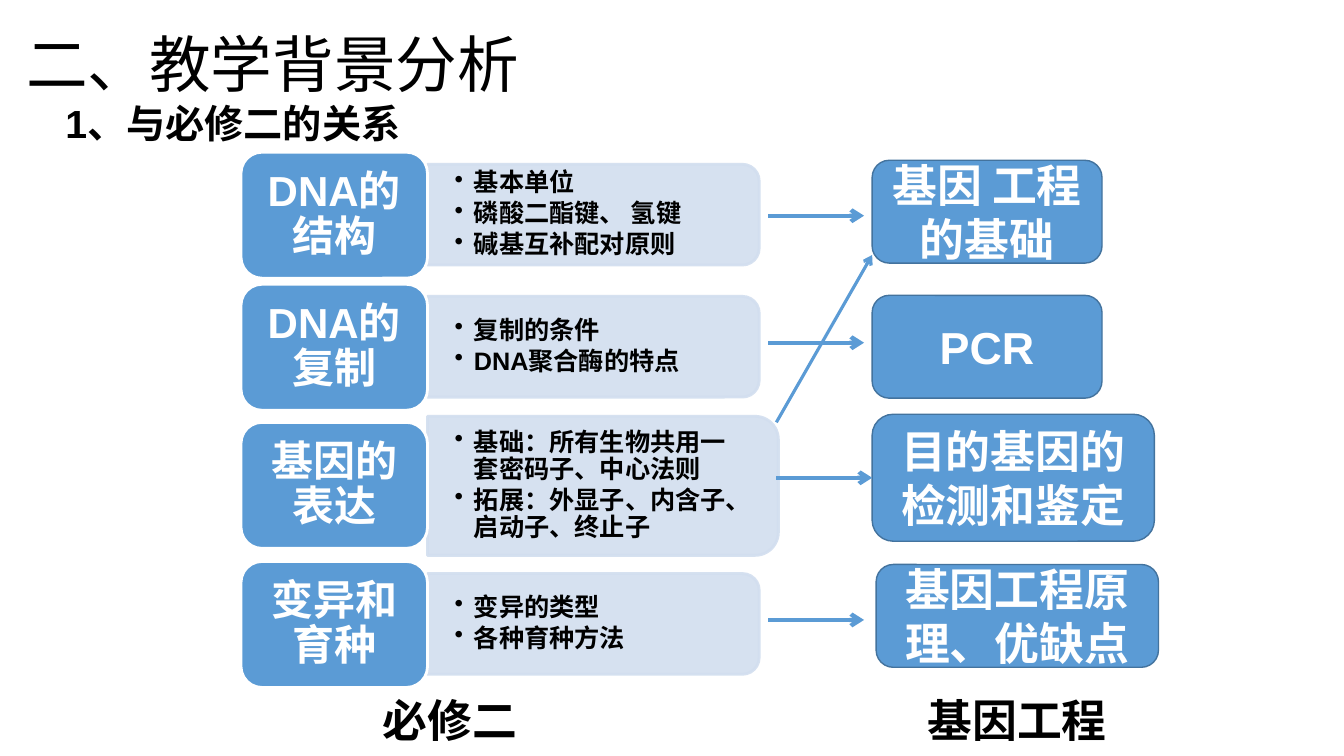
from dataclasses import dataclass
from lxml import etree
from pptx import Presentation
from pptx.dml.color import RGBColor
from pptx.enum.shapes import MSO_CONNECTOR, MSO_SHAPE
from pptx.enum.text import MSO_ANCHOR, PP_ALIGN
from pptx.oxml.ns import qn
from pptx.util import Inches, Pt


@dataclass(frozen=True)
class Theme:
    blue: RGBColor = RGBColor(0x5B, 0x9B, 0xD5)
    edge: RGBColor = RGBColor(0x43, 0x73, 0x9E)
    pale: RGBColor = RGBColor(0xD2, 0xDE, 0xEF)
    white: RGBColor = RGBColor(255, 255, 255)
    black: RGBColor = RGBColor(0, 0, 0)
    latin: str = "Arial"
    cjk: str = "Noto Sans CJK SC"
    title: int = 44
    heading: int = 28
    topic: int = 30
    detail: int = 18
    outcome: int = 32


T = Theme()


def add_block(preset, x, y, w, h, fill, line, weight):
    sp = s.shapes.add_shape(preset, Inches(x), Inches(y), Inches(w), Inches(h))
    sp.shadow.inherit = False
    sp.fill.solid()
    sp.fill.fore_color.rgb = fill
    sp.line.color.rgb = line
    sp.line.width = Pt(weight)
    return sp


def write(sp, lines, size, color, font=T.latin, bold=True, align=PP_ALIGN.LEFT,
          anchor=MSO_ANCHOR.MIDDLE, inset=(0.1, 0.05), spacing=None, bullet=False):
    tf = sp.text_frame
    dx, dy = inset
    frame = dict(word_wrap=True, vertical_anchor=anchor,
                 margin_left=Inches(dx), margin_right=Inches(dx),
                 margin_top=Inches(dy), margin_bottom=Inches(dy))
    for name, value in frame.items():
        setattr(tf, name, value)
    for i, text in enumerate(lines):
        p = tf.add_paragraph() if i else tf.paragraphs[0]
        p.alignment = align
        p.line_spacing = spacing
        if bullet:
            p.space_after = Pt(2.7)
            pPr = p._p.get_or_add_pPr()
            pPr.set("marL", str(Inches(0.19)))
            pPr.set("indent", str(-Inches(0.19)))
            etree.SubElement(pPr, qn("a:buChar")).set("char", "•")
        r = p.add_run()
        r.text = text
        for name, value in dict(name=font, size=Pt(size), bold=bold).items():
            setattr(r.font, name, value)
        r.font.color.rgb = color
        if font == T.cjk:
            etree.SubElement(r._r.get_or_add_rPr(), qn("a:ea")).set("typeface", font)


prs = Presentation()
prs.slide_width, prs.slide_height = Inches(13.33), Inches(7.5)
s = prs.slides.add_slide(prs.slide_layouts[6])

# Textbook topics: label, label top, bar width and height, bar centre, details
topics = [
    ("DNA的结构", 1.51, 3.29, 1, 2.13, ["基本单位", "磷酸二酯键、 氢键", "碱基互补配对原则"]),
    ("DNA的复制", 2.82, 3.29, 1, 3.44, ["复制的条件", "DNA聚合酶的特点"]),
    ("基因的表达", 4.19, 3.48, 1.38, 4.82,
     ["基础：所有生物共用一套密码子、中心法则", "拓展：外显子、内含子、启动子、终止子"]),
    ("变异和育种", 5.57, 3.29, 1, 6.19, ["变异的类型", "各种育种方法"]),
]
bar_left = 4.24
for label, top, w, h, mid, details in topics:
    # The bar is a tall shape turned a quarter, so its rounded end points right
    bar = add_block(MSO_SHAPE.ROUND_2_SAME_RECTANGLE, bar_left + (w - h) / 2, mid - w / 2,
                    h, w, T.pale, T.pale, 2)
    bar.rotation = 90
    for clr in bar._element.spPr.iter(qn("a:srgbClr")):
        etree.SubElement(clr, qn("a:alpha")).set("val", "90000")
    tb = s.shapes.add_textbox(Inches(bar_left), Inches(mid - h / 2 + 0.05),
                              Inches(w - 0.05), Inches(h - 0.1))
    write(tb, details, T.detail, T.black, inset=(0.27, 0.14), spacing=0.9, bullet=True)
    sp = add_block(MSO_SHAPE.ROUNDED_RECTANGLE, 2.39, top, 1.85, 1.25, T.blue, T.white, 2)
    write(sp, [label], T.topic, T.white, align=PP_ALIGN.CENTER, inset=(0.12, 0.06), spacing=0.9)

# Genetic engineering outcomes
outcomes = []
for text, x, y, w, h in [
    ("基因 工程的基础", 8.65, 1.59, 2.28, 1.02),
    ("PCR", 8.65, 2.93, 2.28, 1.02),
    ("目的基因的检测和鉴定", 8.65, 4.11, 2.8, 1.26),
    ("基因工程原理、优缺点", 8.69, 5.6, 2.8, 1.02),
]:
    sp = add_block(MSO_SHAPE.ROUNDED_RECTANGLE, x, y, w, h, T.blue, T.edge, 1)
    write(sp, [text], T.outcome, T.white, align=PP_ALIGN.CENTER)
    outcomes.append(sp)

# Arrows from topics to outcomes: start, end height, weight, joined outcome
for x, y, y_end, weight, target in [
    (7.62, 2.14, 2.14, 3, None),
    (7.62, 3.4, 3.4, 3, None),
    (7.7, 4.19, 2.53, 2.25, None),
    (7.7, 4.74, 4.74, 3, outcomes[2]),
    (7.62, 6.15, 6.15, 3, None),
]:
    arrow = s.shapes.add_connector(MSO_CONNECTOR.STRAIGHT, Inches(x), Inches(y),
                                   Inches(x + 0.95), Inches(y_end))
    if target is not None:
        arrow.end_connect(target, 1)
    arrow.line.color.rgb = T.blue
    arrow.line.width = Pt(weight)
    etree.SubElement(arrow.line._get_or_add_ln(), qn("a:tailEnd")).set("type", "arrow")
    etree.SubElement(arrow._element.spPr, qn("a:effectLst"))

# Captions, title and heading
top, middle = MSO_ANCHOR.TOP, MSO_ANCHOR.MIDDLE
for text, x, y, w, h, fmt in [
    ("必修二", 3.7, 6.82, 3.23, 0.64, dict(size=T.outcome, font=T.cjk, anchor=top)),
    ("基因工程", 9.1, 6.82, 3.23, 0.64, dict(size=T.outcome, font=T.cjk, anchor=top)),
    ("二、教学背景分析", 0.16, -0.06, 11.5, 1.45,
     dict(size=T.title, font=T.cjk, bold=False, anchor=middle, spacing=0.9)),
    ("1、与必修二的关系", 0.55, 0.94, 3.54, 0.57, dict(size=T.heading, anchor=top)),
]:
    tb = s.shapes.add_textbox(Inches(x), Inches(y), Inches(w), Inches(h))
    write(tb, [text], color=T.black, **fmt)

prs.save("out.pptx")
